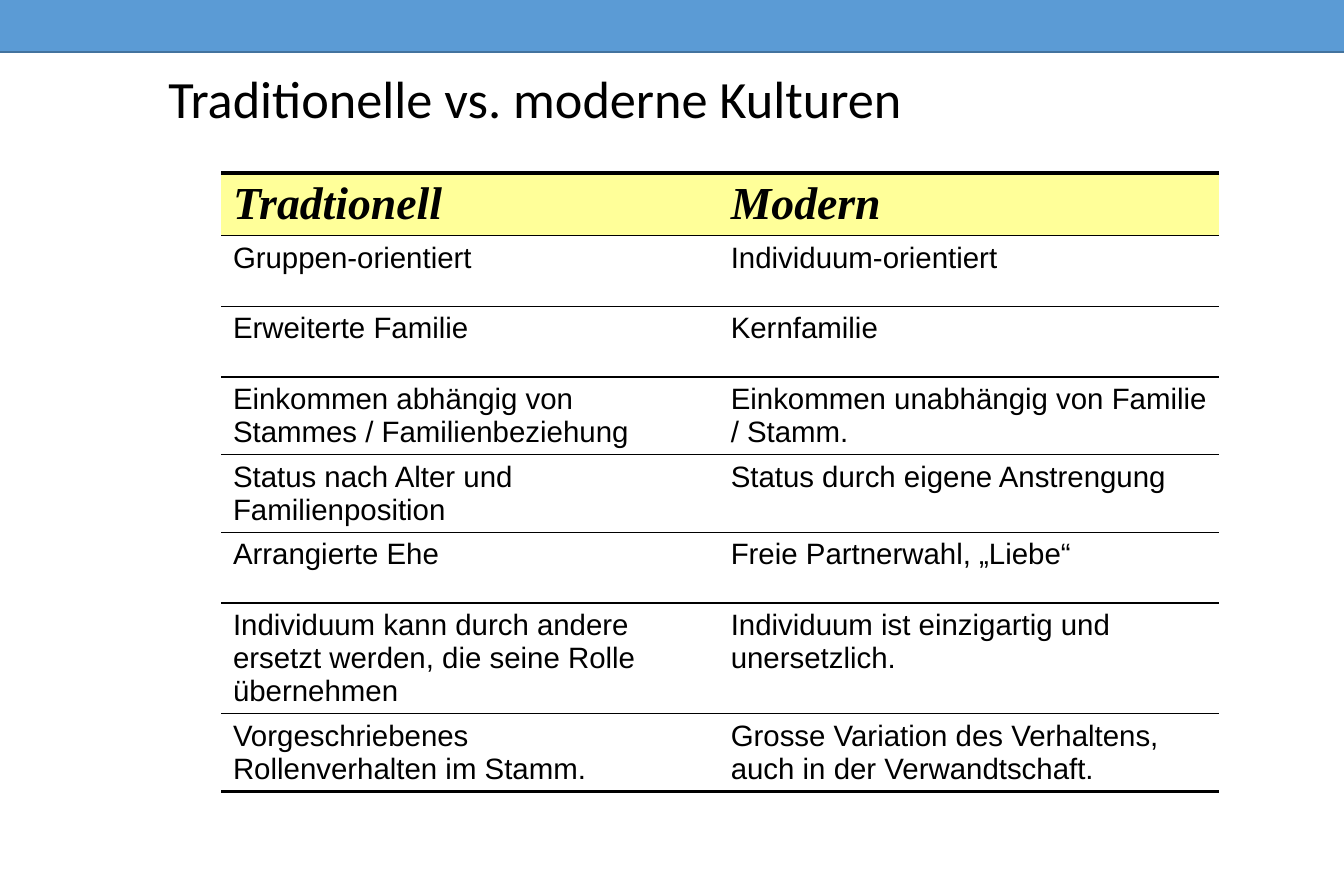
from lxml import etree
from pptx import Presentation
from pptx.dml.color import RGBColor
from pptx.enum import shapes, text
from pptx.oxml import ns
from pptx.util import Inches, Pt

BLACK = RGBColor(0x00, 0x00, 0x00)
WHITE = RGBColor(0xFF, 0xFF, 0xFF)
BLUE = RGBColor(0x5B, 0x9B, 0xD5)
DARK_BLUE = RGBColor(0x43, 0x73, 0x9E)
YELLOW = RGBColor(0xFF, 0xFF, 0x99)

THIN, THICK = 1, 2.25
COLUMN_WIDTHS = (3.91, 0.32, 4.25)
HEADER_HEIGHT, ROW_HEIGHT = 0.47, 0.6
CULTURES = [
    ("Tradtionell", "Modern"),
    ("Gruppen-orientiert", "Individuum-orientiert"),
    ("Erweiterte Familie", "Kernfamilie"),
    ("Einkommen abhängig von Stammes / Familienbeziehung",
     "Einkommen unabhängig von Familie / Stamm."),
    ("Status nach Alter und Familienposition", "Status durch eigene Anstrengung"),
    ("Arrangierte Ehe", "Freie Partnerwahl, „Liebe“"),
    ("Individuum kann durch andere ersetzt werden, die seine Rolle übernehmen",
     "Individuum ist einzigartig und unersetzlich."),
    ("Vorgeschriebenes Rollenverhalten im Stamm.",
     "Grosse Variation des Verhaltens, auch in der Verwandtschaft."),
]


def set_borders(cell, top, bottom):
    """Draw black lines above and below a cell, and none at its sides."""
    properties = cell._tc.get_or_add_tcPr()
    widths = {"a:lnL": 0, "a:lnR": 0, "a:lnT": top, "a:lnB": bottom}
    for place, (tag, width) in enumerate(widths.items()):
        line = etree.Element(ns.qn(tag), w=str(Pt(width)))
        if width:
            fill = etree.SubElement(line, ns.qn("a:solidFill"))
            etree.SubElement(fill, ns.qn("a:srgbClr"), val=str(BLACK))
        else:
            etree.SubElement(line, ns.qn("a:noFill"))
        properties.insert(place, line)


class SlideBuilder:
    """Holds the text style and the current slide."""

    def __init__(self, page, color=BLACK):
        self.page = page
        self.color = color

    def style(self, para, name, size, bold=False, italic=False):
        font = para.font
        font.name, font.size = name, Pt(size)
        font.bold, font.italic = bold, italic
        font.color.rgb = self.color

    def title(self, words, left, top, width, height):
        box = self.page.shapes.title
        box.left, box.top = Inches(left), Inches(top)
        box.width, box.height = Inches(width), Inches(height)
        frame = box.text_frame
        frame.text = words
        frame.vertical_anchor = text.MSO_ANCHOR.MIDDLE
        para = frame.paragraphs[0]
        para.alignment = text.PP_ALIGN.LEFT
        para.line_spacing = 0.9
        self.style(para, "Calibri", 32)

    def bar(self, left, top, width, height):
        box = self.page.shapes.add_shape(
            shapes.MSO_SHAPE.RECTANGLE,
            Inches(left), Inches(top), Inches(width), Inches(height))
        box.shadow.inherit = False
        box.fill.solid()
        box.fill.fore_color.rgb = BLUE
        box.line.color.rgb = DARK_BLUE
        box.line.width = Pt(1)

    def table(self, rows, left, top):
        """Lay out text pairs in the outer columns, with a narrow gap column between."""
        heights = [HEADER_HEIGHT] + [ROW_HEIGHT] * (len(rows) - 1)
        table = self.page.shapes.add_table(
            len(rows), len(COLUMN_WIDTHS), Inches(left), Inches(top),
            Inches(sum(COLUMN_WIDTHS)), Inches(sum(heights))).table
        table.first_row = table.horz_banding = False
        for column, width in zip(table.columns, COLUMN_WIDTHS):
            column.width = Inches(width)
        last = len(rows) - 1
        for number, (traditional, modern) in enumerate(rows):
            header = number == 0
            table.rows[number].height = Inches(heights[number])
            for cell, words in zip(table.rows[number].cells, (traditional, "", modern)):
                cell.fill.solid()
                cell.fill.fore_color.rgb = YELLOW if header else WHITE
                set_borders(cell, THICK if header else THIN,
                            THICK if number == last else THIN)
                if not words:
                    continue
                cell.text = words
                para = cell.text_frame.paragraphs[0]
                if header:
                    self.style(para, "Times New Roman", 28, bold=True, italic=True)
                else:
                    self.style(para, "Arial", 18)


def main():
    deck = Presentation()
    deck.slide_width, deck.slide_height = Inches(11.42), Inches(7.5)
    title_only = deck.slide_layouts[5]
    slide = SlideBuilder(deck.slides.add_slide(title_only))
    slide.bar(-0.36, -0.14, 12.29, 0.58)
    slide.title("Traditionelle vs. moderne Kulturen", 1.33, 0.5, 9.68, 0.73)
    slide.table(CULTURES, 1.88, 1.47)
    deck.save("out.pptx")


if __name__ == "__main__":
    main()
